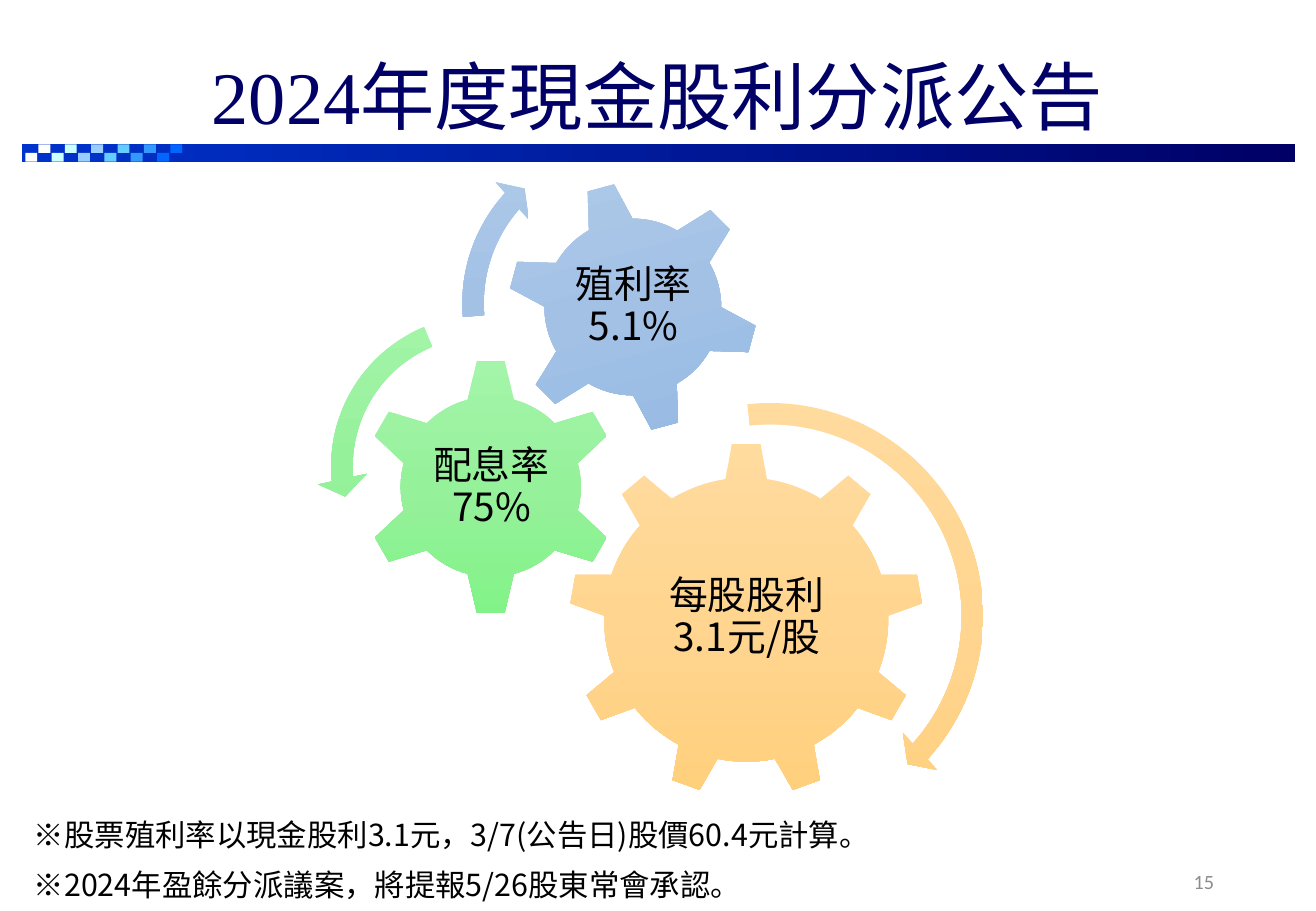
from copy import deepcopy

from pptx import Presentation
from pptx.dml.color import RGBColor
from pptx.enum.shapes import MSO_SHAPE as Shape
from pptx.enum.text import MSO_ANCHOR as Anchor, MSO_AUTO_SIZE as AutoSize, PP_ALIGN as Align
from pptx.oxml import parse_xml
from pptx.oxml.ns import nsdecls, qn
from pptx.util import Cm, Pt

CJK = "Noto Sans CJK SC"
ORANGE = ["FFDB9E", "FFD590", "FFD07C"]
GREEN = ["A4F4A9", "96F19B", "82F388"]
BLUE = ["B1CBE9", "A3C1E5", "93B9E4"]
CHECKER = ["FFFFFF", "CCFFFF", "99CCFF", "66CCFF", "3399FF", "0066FF"]

# gear shape, left, top, size, rotation, colours, label, label box
GEARS = [
    (Shape.GEAR_9, 11.89, 9.25, 7.42, 0, ORANGE, "每股股利 3.1元/股", (13.39, 11, 4.45, 3.81)),
    (Shape.GEAR_6, 7.57, 7.49, 5.38, 0, GREEN, "配息率 75%", (8.94, 8.86, 2.67, 2.67)),
    (Shape.GEAR_6, 10.59, 3.78, 5.28, -15, BLUE, "殖利率 5.1%", (11.76, 4.93, 2.97, 2.97)),
]

# arrow shape, left, top, size, colours,
# (thickness %, head sweep, end angle, start angle in degrees, head width %)
ARROWS = [
    (Shape.CIRCULAR_ARROW, 11.35, 8.13, 9.5, ORANGE, (4.7, 4.98, 42.17, 263.87, 5.5)),
    (Shape.LEFT_CIRCULAR_ARROW, 6.63, 6.3, 6.91, GREEN, (6.5, 7.17, 174.82, 247.3, 7.5)),
    (Shape.CIRCULAR_ARROW, 9.37, 2.62, 7.44, BLUE, (6, 6.57, 221.9, 175.14, 7)),
]

NOTES = [
    "※股票殖利率以現金股利3.1元，3/7(公告日)股價60.4元計算。",
    "※2024年盈餘分派議案，將提報5/26股東常會承認。",
]


def rgb(colour):
    return RGBColor.from_string(colour)


def write(para, text, size, font=CJK, colour="000000", align=Align.LEFT, line=None):
    para.alignment = align
    if line:
        para.line_spacing = Pt(line)
    span = para.add_run()
    span.text = text
    span.font.size = Pt(size)
    span.font.color.rgb = rgb(colour)
    span.font.name = font
    east_asian = parse_xml(f'<a:ea {nsdecls("a")} typeface="{CJK}"/>')
    span._r.get_or_add_rPr().append(east_asian)


def add_text(page, box, lines, anchor=Anchor.TOP, inset=None, hanging=0, **style):
    frame = page.shapes.add_textbox(*map(Cm, box)).text_frame
    frame.word_wrap = True
    frame.vertical_anchor = anchor
    if inset is not None:
        frame.margin_left = frame.margin_right = Cm(inset)
        frame.margin_top = frame.margin_bottom = Cm(inset)
    for index, text in enumerate(lines):
        para = frame.add_paragraph() if index else frame.paragraphs[0]
        if hanging:
            properties = para._p.get_or_add_pPr()
            properties.set("marL", str(Cm(hanging)))
            properties.set("indent", str(-Cm(hanging)))
        write(para, text, **style)


def add_filled(page, kind, box, colours, angle=270):
    """Add a shape without outline; several colours make an even gradient."""
    shape = page.shapes.add_shape(kind, *map(Cm, box))
    shape.shadow.inherit = False
    shape.line.fill.background()
    if len(colours) == 1:
        shape.fill.solid()
        shape.fill.fore_color.rgb = rgb(colours[0])
        return shape
    shape.fill.gradient()
    shape.fill.gradient_angle = angle
    stop_list = shape._element.spPr.find(".//" + qn("a:gsLst"))
    while len(stop_list) < len(colours):
        stop_list.insert(1, deepcopy(stop_list[0]))
    for index, (stop, colour) in enumerate(zip(shape.fill.gradient_stops, colours)):
        stop.position = index / (len(colours) - 1)
        stop.color.rgb = rgb(colour)
    return shape


def add_title(page, text):
    title = page.shapes.title
    title.left, title.top, title.width, title.height = map(Cm, (2.08, 0.91, 23.34, 2.13))
    title.text_frame.auto_size = AutoSize.NONE
    title.text_frame.vertical_anchor = Anchor.MIDDLE
    write(title.text_frame.paragraphs[0], text, 44, "Times New Roman", "000066", Align.CENTER)


def add_band(page):
    left, top, width, height = 0.46, 3.02, 26.62, 0.36
    add_filled(page, Shape.RECTANGLE, (left, top, width, height), ["0033CC", "000066"], 0)
    count = 2 * len(CHECKER)
    pitch = 3.03 / (count - 1)
    for index in range(count):
        row_top = top if index % 2 else top + height / 2
        box = (0.53 + index * pitch, row_top, 0.25, height / 2)
        add_filled(page, Shape.RECTANGLE, box, [CHECKER[index // 2]])


def add_gear(page, kind, left, top, size, rotation, colours, label, label_box):
    gear = add_filled(page, kind, (left, top, size, size), colours)
    gear.rotation = rotation
    add_text(page, label_box, [label], Anchor.MIDDLE, inset=0.08,
             size=23, align=Align.CENTER, line=24.9)


def add_arrow(page, kind, left, top, size, colours, form):
    arrow = add_filled(page, kind, (left, top, size, size), colours)
    thickness, sweep, end, start, head = form
    values = [thickness / 100, sweep * 0.6, end * 0.6, start * 0.6, head / 100]
    for index, value in enumerate(values):
        arrow.adjustments[index] = value


def main():
    deck = Presentation()
    deck.slide_width, deck.slide_height = Cm(27.51), Cm(19.05)
    page = deck.slides.add_slide(deck.slide_layouts[5])
    add_title(page, "2024年度現金股利分派公告")
    add_band(page)
    add_text(page, (19.43, 17.93, 6.2, 1.02), ["15"], Anchor.MIDDLE,
             size=12, font="Calibri", colour="8C8C8C", align=Align.RIGHT)
    add_text(page, (0.46, 16.66, 25.68, 0.94), NOTES, hanging=1.7, size=18, line=29.6)
    for gear in GEARS:
        add_gear(page, *gear)
    for arrow in ARROWS:
        add_arrow(page, *arrow)
    deck.save("out.pptx")


if __name__ == "__main__":
    main()
